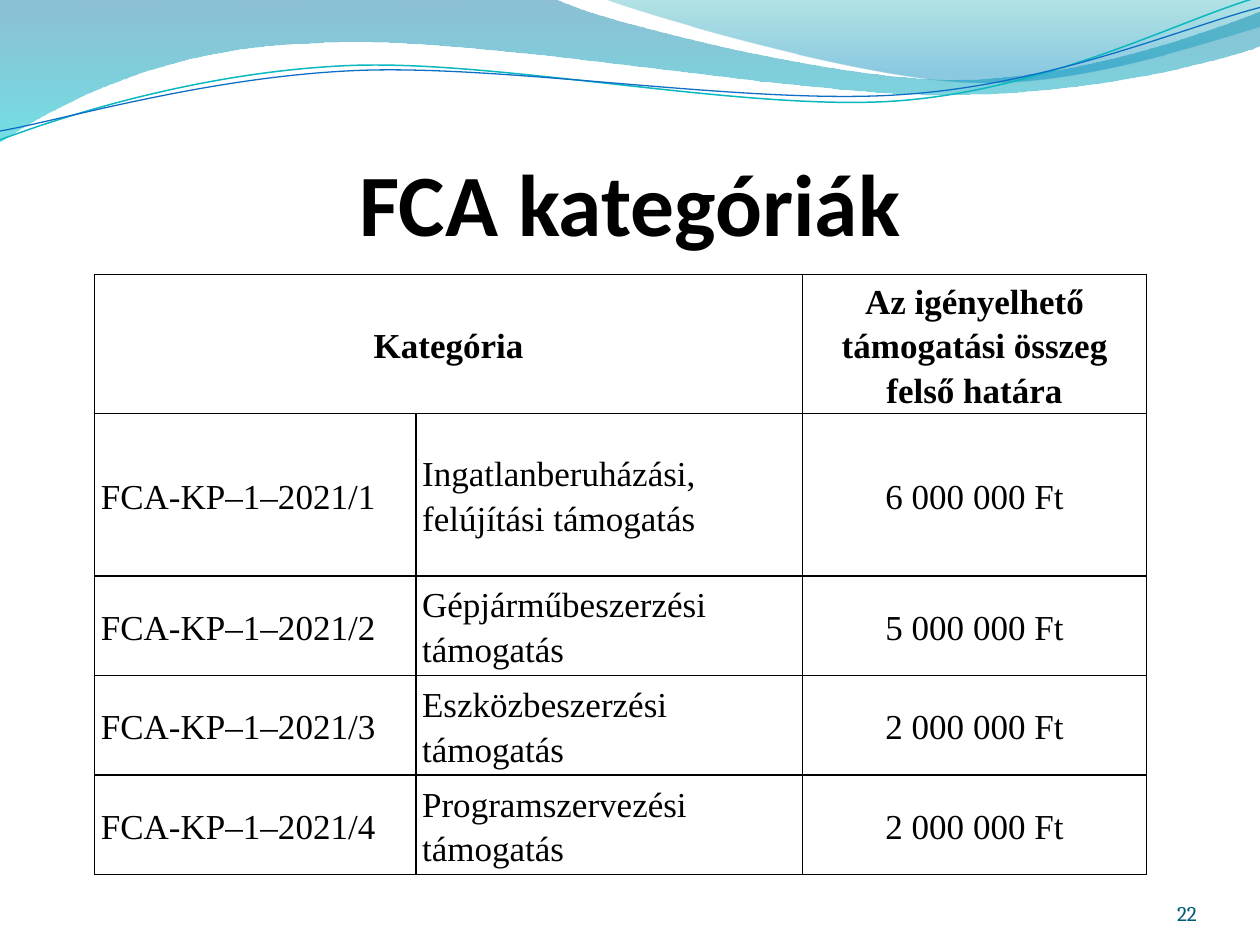
import math

from lxml import etree
from pptx import Presentation
from pptx import util as u
from pptx.dml.color import RGBColor
from pptx.enum import text
from pptx.oxml import parse_xml
from pptx.oxml.ns import nsdecls, qn

BLACK = "000000"
LINE_TILT = 2.7
COLUMN_WIDTHS = [2.55, 3.07, 2.73]
ROW_HEIGHTS = [1.1, 1.29, 0.79, 0.79, 0.79]
ROWS = [
    ["Kategória", "", "Az igényelhető támogatási összeg felső határa"],
    ["FCA-KP–1–2021/1", "Ingatlanberuházási, felújítási támogatás", "6 000 000 Ft"],
    ["FCA-KP–1–2021/2", "Gépjárműbeszerzési támogatás", "5 000 000 Ft"],
    ["FCA-KP–1–2021/3", "Eszközbeszerzési támogatás", "2 000 000 Ft"],
    ["FCA-KP–1–2021/4", "Programszervezési támogatás", "2 000 000 Ft"],
]
WIDE_WAVE = [
    [(0, 0)],
    [(4.4, -0.01)],
    [(4.76, 0.17), (6.64, 0.63), (7.58, 0.63)],
    [(8.53, 0.63), (9.58, 0.26), (10, 0.09)],
    [(10.01, 0.36)],
    [(9.83, 0.44), (8.7, 0.76), (7.46, 0.75)],
    [(6.22, 0.75), (3.82, 0.28), (2.57, 0.34)],
    [(1.29, 0.36), (0.46, 0.83), (-0.01, 1.13)],
    [(0, 0)],
]
RIGHT_WAVE = [
    [(4.79, -0.01)],
    [(5.09, 0.11), (6.82, 0.62), (7.69, 0.65)],
    [(8.56, 0.69), (9.61, 0.32), (10, 0.21)],
    [(10, 0)],
    [(4.79, -0.01)],
]
TEAL_LINE = [
    [(0, 1.11)],
    [(0.48, 0.93), (1.58, 0.57), (2.77, 0.52)],
    [(3.95, 0.47), (5.93, 0.89), (7.13, 0.8)],
    [(8.33, 0.71), (9.38, 0.15), (9.98, -0.02)],
]
BLUE_LINE = [
    [(0, 1.04)],
    [(0.47, 0.96), (1.64, 0.61), (2.83, 0.56)],
    [(4.03, 0.51), (5.97, 0.84), (7.17, 0.75)],
    [(8.36, 0.67), (9.41, 0.21), (10, 0.06)],
]


def color(value):
    return RGBColor.from_string(value)


def add_curve(page, segments, closed):
    points = [(u.Inches(x), u.Inches(y)) for part in segments for x, y in part]
    builder = page.shapes.build_freeform(*points[0])
    builder.add_line_segments(points[1:], close=closed)
    shape = builder.convert_to_shape()
    shape.shadow.inherit = False
    shape.fill.background()
    steps = iter(list(shape.element.iter(qn("a:lnTo"))))
    for part in segments[1:]:
        first = next(steps)
        if len(part) == 3:
            first.tag = qn("a:cubicBezTo")
            for step in (next(steps), next(steps)):
                first.append(step[0])
                step.getparent().remove(step)
    return shape


def add_wave(page, segments, stops):
    shape = add_curve(page, segments, True)
    shape.line.fill.background()
    entries = "".join(
        f'<a:gs pos="{place * 1000}"><a:srgbClr val="{value}">'
        f'<a:alpha val="{opacity * 1000}"/></a:srgbClr></a:gs>'
        for place, value, opacity in stops
    )
    gradient = parse_xml(
        f'<a:gradFill {nsdecls("a")} rotWithShape="1"><a:gsLst>{entries}</a:gsLst>'
        '<a:lin ang="5400000" scaled="0"/></a:gradFill>'
    )
    properties = shape.element.spPr
    properties.replace(properties.find(qn("a:noFill")), gradient)


def turn(point, center):
    angle = math.radians(LINE_TILT)
    x, y = point[0] - center[0], point[1] - center[1]
    return (
        center[0] + x * math.cos(angle) - y * math.sin(angle),
        center[1] + x * math.sin(angle) + y * math.cos(angle),
    )


def add_wave_line(page, segments, center, value, width):
    level = [[turn(point, center) for point in part] for part in segments]
    shape = add_curve(page, level, False)
    shape.rotation = 360 - LINE_TILT
    shape.line.color.rgb = color(value)
    shape.line.width = u.Pt(width)


def style_paragraph(para, font, size, value, bold, align):
    para.alignment = align
    para.font.name = font
    para.font.size = u.Pt(size)
    para.font.color.rgb = color(value)
    para.font.bold = bold


def fill_text(box, content, top, *style):
    frame = box.text_frame
    frame.word_wrap = True
    frame.auto_size = text.MSO_AUTO_SIZE.NONE
    frame.vertical_anchor = text.MSO_ANCHOR.BOTTOM
    frame.margin_left = frame.margin_right = frame.margin_bottom = 0
    frame.margin_top = u.Inches(top)
    frame.text = content
    style_paragraph(frame.paragraphs[0], *style)


def add_title(page, content):
    title = page.shapes.title
    title.left, title.top = u.Inches(0.5), u.Inches(0.77)
    title.width, title.height = u.Inches(9), u.Inches(1.25)
    fill_text(title, content, 0.05, "Calibri", 50, BLACK, True, text.PP_ALIGN.CENTER)


def add_page_number(page, content):
    box = page.shapes.add_textbox(
        u.Inches(8.67), u.Inches(6.95), u.Inches(0.83), u.Inches(0.4)
    )
    fill_text(box, content, 0, "Cambria", 12, "045D75", False, text.PP_ALIGN.RIGHT)


def set_borders(cell):
    properties = cell._tc.get_or_add_tcPr()
    for index, side in enumerate("LRTB"):
        border = etree.Element(qn(f"a:ln{side}"), w=str(u.Pt(1)))
        fill = etree.SubElement(border, qn("a:solidFill"))
        etree.SubElement(fill, qn("a:srgbClr"), val=BLACK)
        properties.insert(index, border)


def fill_cell(cell, content, row, column):
    cell.fill.background()
    cell.vertical_anchor = text.MSO_ANCHOR.MIDDLE
    cell.margin_left = cell.margin_right = u.Inches(0.05)
    cell.margin_top = cell.margin_bottom = 0
    cell.text = content
    para = cell.text_frame.paragraphs[0]
    para.line_spacing = 1.15
    centred = row == 0 or column == 2
    align = text.PP_ALIGN.CENTER if centred else text.PP_ALIGN.LEFT
    style_paragraph(para, "Times New Roman", 20, BLACK, row == 0, align)
    set_borders(cell)


def add_category_table(page):
    holder = page.shapes.add_table(
        len(ROWS), len(COLUMN_WIDTHS), u.Inches(0.75), u.Inches(2.18),
        u.Inches(8.35), u.Inches(4.82),
    )
    table = holder.table
    table.first_row = table.horz_banding = False
    for column, width in zip(table.columns, COLUMN_WIDTHS):
        column.width = u.Inches(width)
    for row, height in zip(table.rows, ROW_HEIGHTS):
        row.height = u.Inches(height)
    holder.height = u.Inches(4.82)
    for row, contents in enumerate(ROWS):
        for column, content in enumerate(contents):
            fill_cell(table.cell(row, column), content, row, column)
    table.cell(0, 0).merge(table.cell(0, 1))


def main():
    deck = Presentation()
    deck.slide_width, deck.slide_height = u.Inches(10), u.Inches(7.5)
    page = deck.slides.add_slide(deck.slide_layouts[5])
    add_wave(page, WIDE_WAVE, [(0, "0074A1", 45), (100, "00C6CF", 55)])
    add_wave(page, RIGHT_WAVE, [(0, "00A1A9", 30), (80, "008BBF", 45)])
    add_wave_line(page, TEAL_LINE, (4.99, 0.58), "0AB8BF", 0.85)
    add_wave_line(page, BLUE_LINE, (5, 0.59), "0F6FC6", 0.75)
    add_title(page, "FCA kategóriák")
    add_category_table(page)
    add_page_number(page, "22")
    deck.save("out.pptx")


if __name__ == "__main__":
    main()
